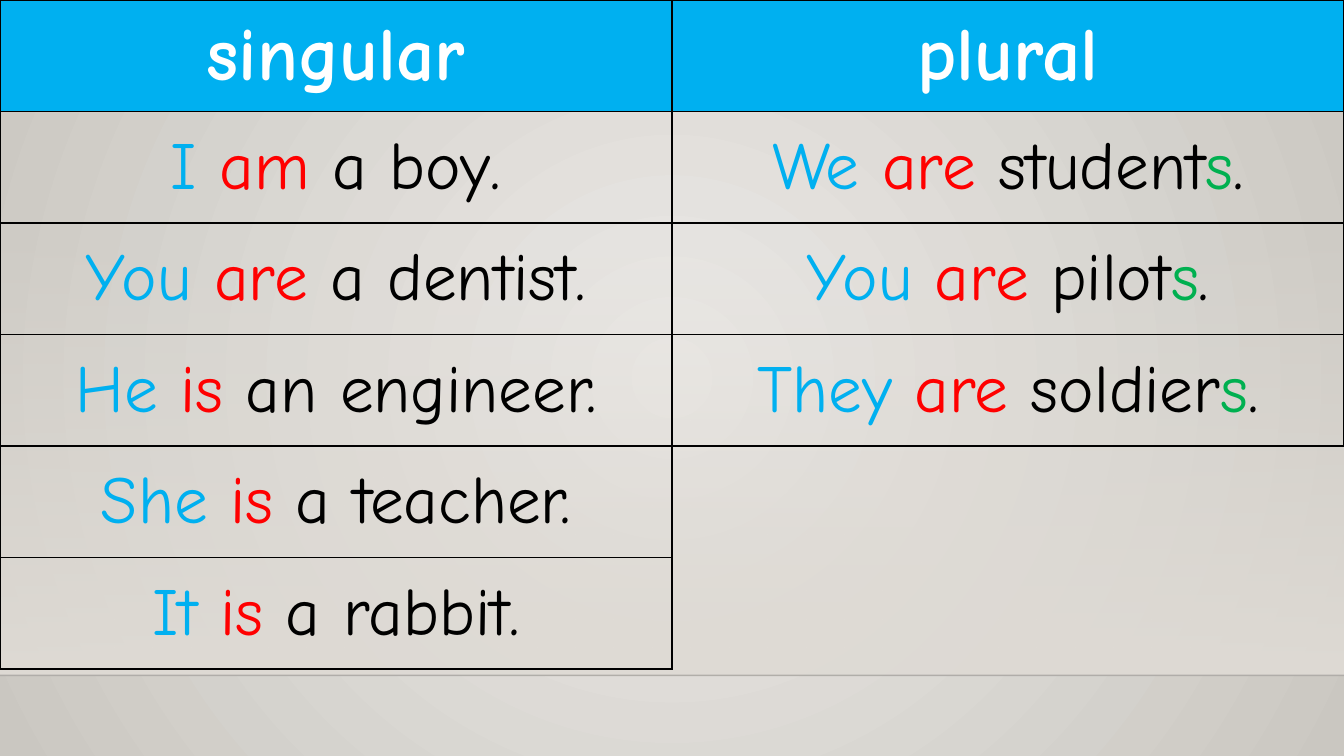
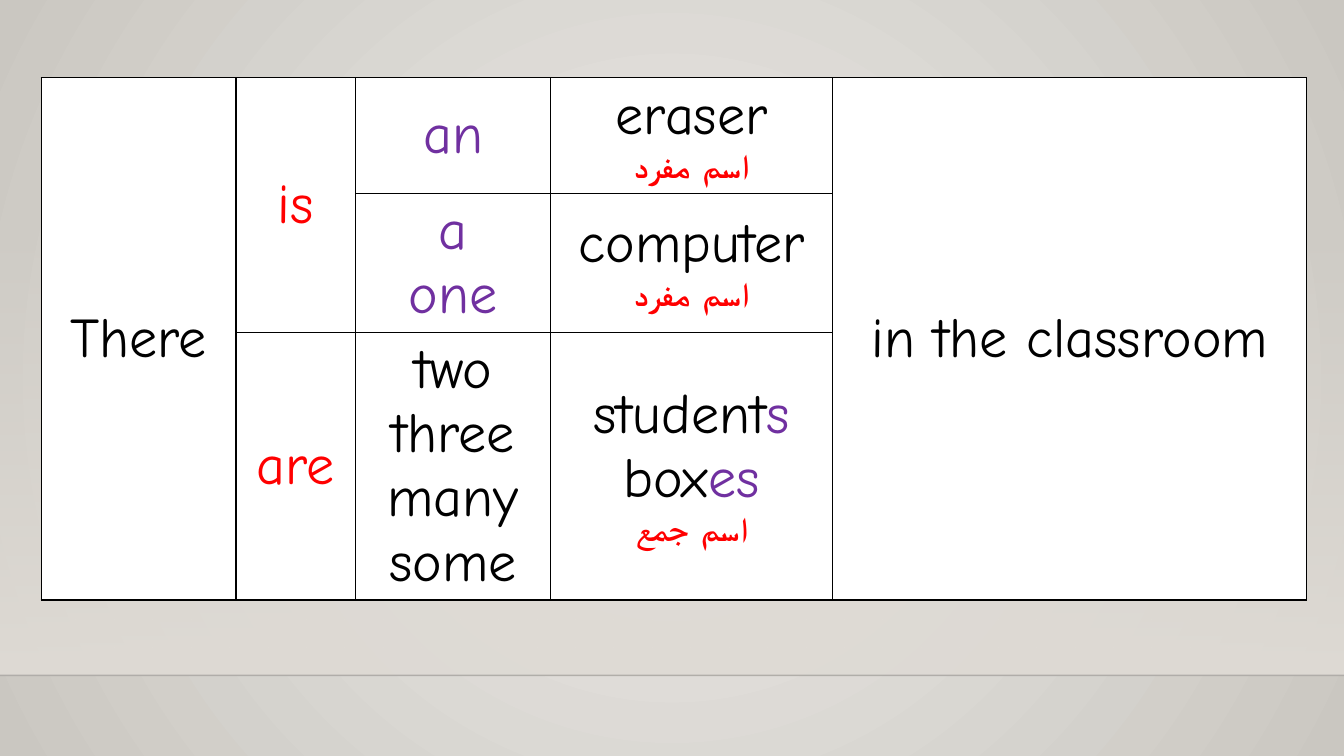
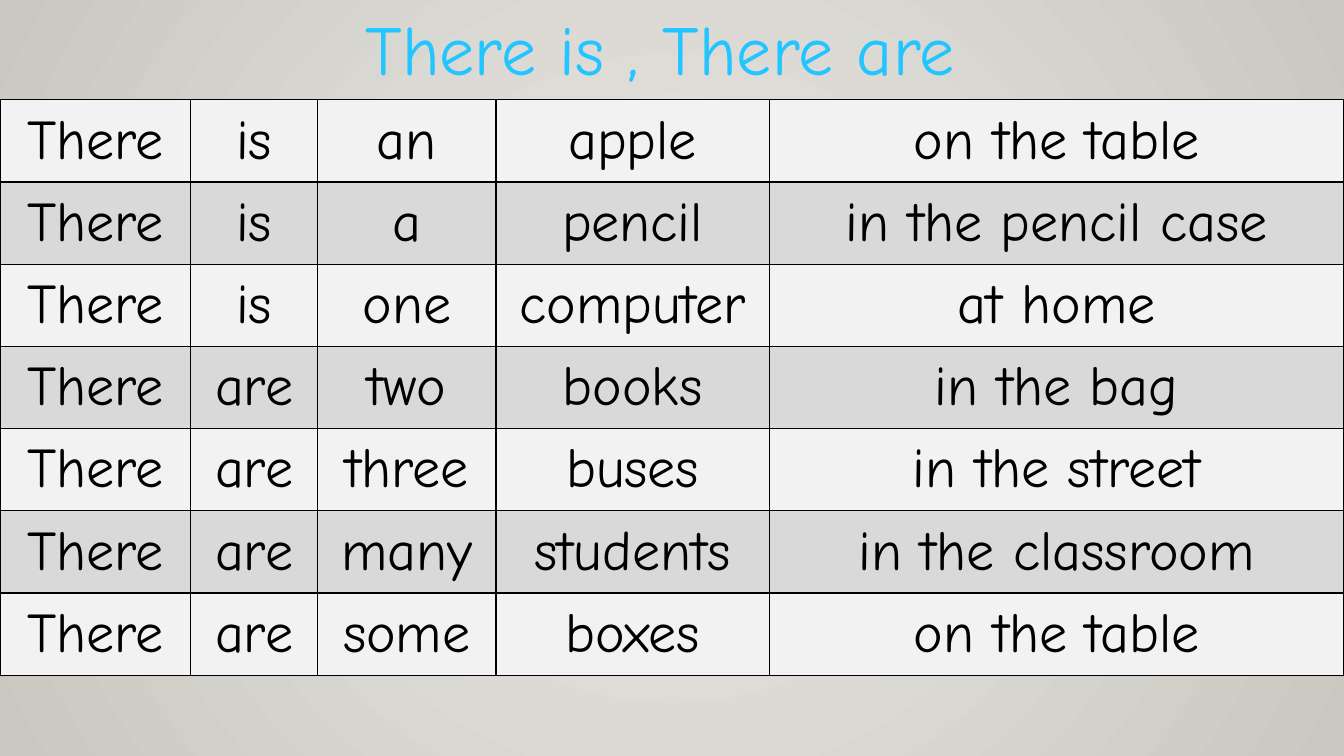
"""Build three English grammar slides: am/is/are, there is and there are."""
from dataclasses import dataclass

from lxml import etree
from pptx import Presentation
from pptx import util as u
from pptx.dml import color
from pptx.enum import shapes, text
from pptx.oxml import ns

FONT = "Comic Neue"
WIDTH, HEIGHT = 13.33, 7.5
BAND_TOP, BAND_BOTTOM = 2.21, 6.7
BLACK, WHITE, RED, BLUE = "000000", "FFFFFF", "FF0000", "00B0F0"
GREEN, PURPLE, CYAN, PALE, GREY = "00B050", "7030A0", "21C5FF", "F2F2F2", "D9D9D9"


@dataclass(frozen=True)
class Span:
    text: str
    colour: str = BLACK
    size: float = 40
    bold: bool = False


@dataclass(frozen=True)
class Cell:
    paragraphs: tuple[tuple[Span, ...], ...] = ()
    fill: str | None = None
    sides: str = "LRTB"


@dataclass(frozen=True)
class Grid:
    left: float
    top: float
    widths: list[float]
    heights: list[float]
    rows: list[list[Cell]]
    merges: tuple[tuple[int, int, int, int], ...] = ()


def rgb(value: str) -> color.RGBColor:
    return color.RGBColor.from_string(value)


def add_node(parent, tag: str, **attributes):
    return etree.SubElement(parent, ns.qn(tag), attributes)


def add_colour(parent, value: str, opacity: int = 100) -> None:
    node = add_node(parent, "a:srgbClr", val=value)
    if opacity < 100:
        add_node(node, "a:alpha", val=str(opacity * 1000))


def reset_gradient(element, first: tuple[str, int], last: tuple[str, int]):
    gradient = next(element.iter(ns.qn("a:gradFill")))
    for child in list(gradient):
        gradient.remove(child)
    stops = add_node(gradient, "a:gsLst")
    for position, (value, opacity) in (("0", first), ("100000", last)):
        add_colour(add_node(stops, "a:gs", pos=position), value, opacity)
    return gradient


def add_span(para, content: str, *, colour: str = BLACK, size: float = 40,
             bold: bool = False, outline: str | None = None) -> None:
    span = para.add_run()
    span.text = content
    span.font.size = u.Pt(size)
    span.font.bold = bold
    span.font.name = FONT
    span.font.color.rgb = rgb(colour)
    properties = span._r.get_or_add_rPr()
    add_node(properties, "a:cs", typeface=FONT)
    if outline:
        line = add_node(properties, "a:ln", w=str(u.Pt(1.75)))
        add_colour(add_node(line, "a:solidFill"), outline)
        properties.insert(0, line)


def style_master(deck, page) -> None:
    master = deck.slide_master
    master.background.fill.gradient()
    gradient = reset_gradient(master._element, ("ECEAE7", 100), ("CAC7C1", 100))
    circle = add_node(gradient, "a:path", path="circle")
    add_node(circle, "a:fillToRect", l="50000", t="50000", r="50000", b="50000")

    band = page.shapes.add_shape(
        shapes.MSO_SHAPE.RECTANGLE, 0, u.Inches(BAND_TOP),
        u.Inches(WIDTH), u.Inches(BAND_BOTTOM - BAND_TOP))
    band.shadow.inherit = False
    band.line.fill.background()
    band.fill.gradient()
    gradient = reset_gradient(band._element, ("DFDBD5", 0), ("DFDBD5", 100))
    add_node(gradient, "a:lin", ang="5400000", scaled="0")

    edge = page.shapes.add_connector(
        shapes.MSO_CONNECTOR.STRAIGHT, 0, u.Inches(BAND_BOTTOM),
        u.Inches(WIDTH), u.Inches(BAND_BOTTOM))
    edge.line.width = u.Pt(1)
    edge.line.color.rgb = rgb("000001")
    line_colour = next(edge._element.iter(ns.qn("a:srgbClr")))
    add_node(line_colour, "a:alpha", val="20000")
    add_node(edge._element.spPr, "a:effectLst")

    for index, shape in enumerate((band, edge)):
        shape._element.xpath(".//p:cNvPr")[0].set("id", str(20 + index))
        master.shapes._spTree.insert(2 + index, shape._element)


def draw_cell(box, cell: Cell) -> None:
    if cell.fill:
        box.fill.solid()
        box.fill.fore_color.rgb = rgb(cell.fill)
    else:
        box.fill.background()
    properties = box._tc.get_or_add_tcPr()
    for index, side in enumerate("LRTB"):
        line = add_node(properties, f"a:ln{side}", w=str(u.Pt(1)))
        properties.insert(index, line)
        if side in cell.sides:
            add_colour(add_node(line, "a:solidFill"), BLACK)
        else:
            add_node(line, "a:noFill")
    box.vertical_anchor = text.MSO_ANCHOR.MIDDLE
    frame = box.text_frame
    for index, spans in enumerate(cell.paragraphs):
        para = frame.add_paragraph() if index else frame.paragraphs[0]
        para.alignment = text.PP_ALIGN.CENTER
        for span in spans:
            add_span(para, span.text, colour=span.colour, size=span.size, bold=span.bold)


def draw_grid(page, grid: Grid) -> None:
    table = page.shapes.add_table(
        len(grid.heights), len(grid.widths), u.Inches(grid.left), u.Inches(grid.top),
        u.Inches(sum(grid.widths)), u.Inches(sum(grid.heights))).table
    table.first_row = table.horz_banding = False
    for column, width in zip(table.columns, grid.widths):
        column.width = u.Inches(width)
    for row, height in zip(table.rows, grid.heights):
        row.height = u.Inches(height)
    for top, left, bottom, right in grid.merges:
        table.cell(top, left).merge(table.cell(bottom, right))
    for row_index, cells in enumerate(grid.rows):
        for column_index, cell in enumerate(cells):
            draw_cell(table.cell(row_index, column_index), cell)


def heading(word: str) -> Cell:
    return Cell(((Span(word, WHITE, 54, True),),), BLUE)


def sentence(subject: str, verb: str, rest: str, plural: bool = False) -> Cell:
    spans = [Span(f"{subject} ", BLUE, 48), Span(verb, RED, 48), Span(f" {rest}", BLACK, 48)]
    if plural:
        spans += [Span("s", GREEN, 48), Span(".", BLACK, 48)]
    return Cell((tuple(spans),))


def words(*lines: str, colour: str = BLACK, fill: str = WHITE) -> Cell:
    return Cell(tuple((Span(line, colour),) for line in lines), fill)


def nouns(label: str, *names: tuple[str, str]) -> Cell:
    lines = tuple((Span(stem), Span(ending, PURPLE)) if ending else (Span(stem),)
                  for stem, ending in names)
    return Cell(lines + ((Span(label, RED, 24, True),),), WHITE)


def pronoun_grid() -> Grid:
    rows = [
        [heading("singular"), heading("plural")],
        [sentence("I", "am", "a boy."), sentence("We", "are", "student", True)],
        [sentence("You", "are", "a dentist."), sentence("You", "are", "pilot", True)],
        [sentence("He", "is", "an engineer."), sentence("They", "are", "soldier", True)],
        [sentence("She", "is", "a teacher."), Cell(sides="LT")],
        [sentence("It", "is", "a rabbit."), Cell(sides="L")],
    ]
    return Grid(0, 0, [WIDTH / 2] * 2, [6.64 / len(rows)] * len(rows), rows)


def pattern_grid() -> Grid:
    covered = Cell(fill=WHITE)
    singular = "اسم مفرد"
    rows = [
        [words("There"), words("is", colour=RED), words("an", colour=PURPLE),
         nouns(singular, ("eraser", "")), words("in the classroom")],
        [covered, covered, words("a", "one", colour=PURPLE),
         nouns(singular, ("computer", "")), covered],
        [covered, words("are", colour=RED), words("two", "three", "many", "some"),
         nouns("اسم جمع", ("student", "s"), ("box", "es")), covered],
    ]
    return Grid(0.41, 0.77, [1.93, 1.19, 1.93, 2.8, 4.7], [1.15, 1.38, 2.65], rows,
                ((0, 0, 2, 0), (0, 1, 1, 1), (0, 4, 2, 4)))


def example_grid() -> Grid:
    examples = [
        ("is", "an", "apple", "on the table"),
        ("is", "a", "pencil", "in the pencil case"),
        ("is", "one", "computer", "at home"),
        ("are", "two", "books", "in the bag"),
        ("are", "three", "buses", "in the street"),
        ("are", "many", "students", "in the classroom"),
        ("are", "some", "boxes", "on the table"),
    ]
    rows = [[words(word, fill=GREY if index % 2 else PALE) for word in ("There", *example)]
            for index, example in enumerate(examples)]
    return Grid(0, 0.99, [1.89, 1.26, 1.77, 2.71, 5.7],
                [5.71 / len(rows)] * len(rows), rows)


def draw_title(page, content: str) -> None:
    title = page.shapes.title
    title.left, title.top = u.Inches(0), u.Inches(0)
    title.width, title.height = u.Inches(WIDTH), u.Inches(0.94)
    frame = title.text_frame
    frame.word_wrap = True
    frame.auto_size = text.MSO_AUTO_SIZE.SHAPE_TO_FIT_TEXT
    para = frame.paragraphs[0]
    para.alignment = text.PP_ALIGN.CENTER
    add_span(para, content, colour=CYAN, size=50, outline="69ADE5")


def main() -> None:
    deck = Presentation()
    deck.slide_width, deck.slide_height = u.Inches(WIDTH), u.Inches(HEIGHT)
    title_only, blank = deck.slide_layouts[5], deck.slide_layouts[6]
    pages = [deck.slides.add_slide(layout) for layout in (blank, blank, title_only)]
    style_master(deck, pages[0])
    for page, grid in zip(pages, (pronoun_grid(), pattern_grid(), example_grid())):
        draw_grid(page, grid)
    draw_title(pages[2], "There is , There are ")
    deck.save("out.pptx")


if __name__ == "__main__":
    main()
